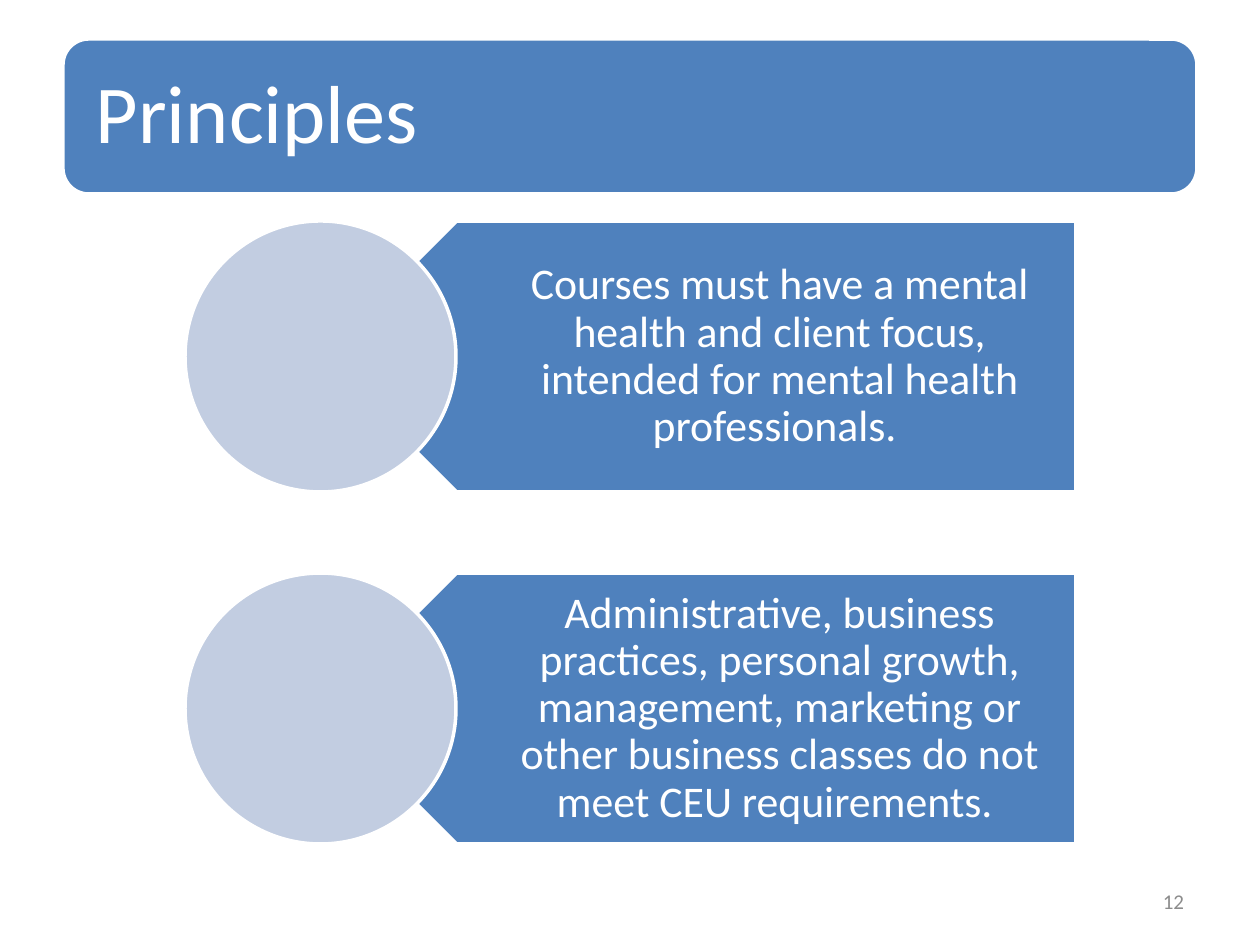
"""Build the Principles slide: a title bar above two circle-and-arrow statements."""
from pptx import Presentation
from pptx.dml.color import RGBColor
from pptx.enum.shapes import MSO_SHAPE as Shape
from pptx.enum.text import MSO_ANCHOR as Anchor, PP_ALIGN as Align
from pptx.util import Inches, Pt

PX = Inches(1) / 126
BLUE, PALE, WHITE, GREY = "4F81BD", "C2CDE1", "FFFFFF", "8C8C8C"
color = RGBColor.from_string

deck = Presentation()
deck.slide_width, deck.slide_height = Inches(10), Inches(7.5)
page = deck.slides.add_slide(deck.slide_layouts[6])


def add_block(kind, bounds, fill):
    block = page.shapes.add_shape(kind, *(round(n * PX) for n in bounds))
    block.shadow.inherit = False
    block.fill.solid()
    block.fill.fore_color.rgb = color(fill)
    block.line.color.rgb = color(WHITE)
    block.line.width = Pt(2)
    return block


def add_text(text, bounds, margins, size, align, ink=WHITE, spacing=0.9):
    box = page.shapes.add_textbox(*(round(n * PX) for n in bounds))
    frame = box.text_frame
    frame.word_wrap = True
    frame.vertical_anchor = Anchor.MIDDLE
    (frame.margin_left, frame.margin_top,
     frame.margin_right, frame.margin_bottom) = (round(n * PX) for n in margins)
    para = frame.paragraphs[0]
    para.text = text
    para.alignment = align
    para.line_spacing = spacing
    para.font.name = "Calibri"
    para.font.size = Pt(size)
    para.font.color.rgb = color(ink)


add_block(Shape.ROUNDED_RECTANGLE, (63, 39, 1134, 155), BLUE)
add_text("Principles", (71, 47, 1119, 139), (25, 25, 25, 25), 47, Align.LEFT)

principles = [
    "Courses must have a mental health and client focus, "
    "intended for mental health professionals. ",
    "Administrative, business practices, personal growth, management, "
    "marketing or other business classes do not meet CEU requirements. ",
]
DIAMETER = 271
for index, principle in enumerate(principles):
    top = 221 + index * 352
    arrow = add_block(Shape.PENTAGON, (321, top, 755, DIAMETER), BLUE)
    arrow.rotation = 180
    add_text(principle, (388, top, 687, DIAMETER), (120, 12, 24, 12), 25, Align.CENTER)
    add_block(Shape.OVAL, (185, top, DIAMETER, DIAMETER), PALE)

add_text("12", (903, 876, 294, 50), (13, 6, 13, 6), 12, Align.RIGHT, GREY, 1.0)

deck.save("out.pptx")
